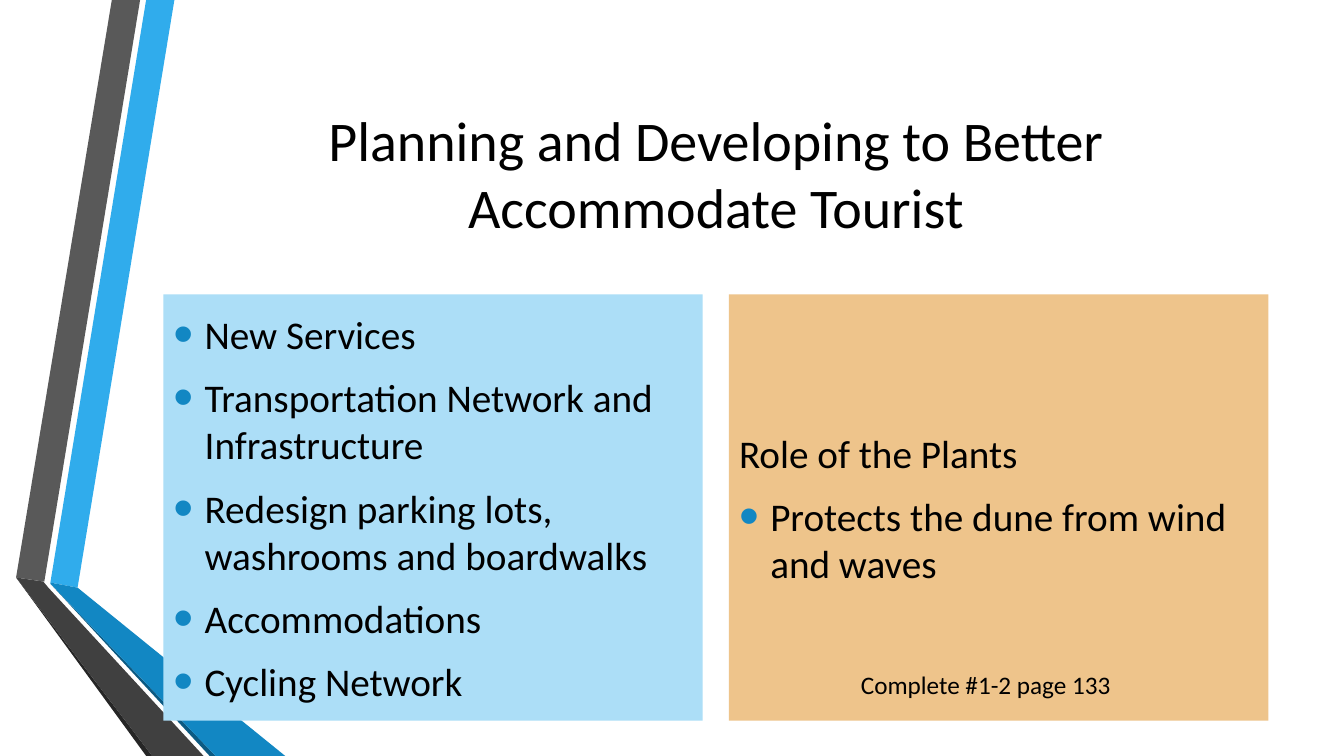
"""Build the slide on planning for tourists: ribbon, title and two panels."""
from lxml import etree
from pptx import Presentation
from pptx.dml.color import RGBColor
from pptx.enum import text
from pptx.oxml import ns
from pptx.util import Inches, Pt

COLORS = {
    "black": "000000", "sky": "30ACEC", "gray": "595959", "soot": "262626",
    "navy": "0C5A82", "blue": "1287C3", "char": "404040",
    "pale": "ACDEF7", "sand": "EEC48B",
}


def add_run(p, words, size):
    r = p.add_run()
    r.text = words
    r.font.name = "Calibri"
    r.font.size = Pt(size)
    r.font.color.rgb = RGBColor.from_string(COLORS["black"])


def set_bullet(p, bulleted):
    pPr = p._p.get_or_add_pPr()
    indent = Inches(0.31) if bulleted else 0
    pPr.set("marL", str(indent))
    pPr.set("indent", str(-indent))
    if not bulleted:
        etree.SubElement(pPr, ns.qn("a:buNone"))
        return
    clr = etree.SubElement(pPr, ns.qn("a:buClr"))
    etree.SubElement(clr, ns.qn("a:srgbClr"), val=COLORS["blue"])
    etree.SubElement(pPr, ns.qn("a:buSzPct"), val="145000")
    etree.SubElement(pPr, ns.qn("a:buFont"), typeface="Arial")
    etree.SubElement(pPr, ns.qn("a:buChar"), char="•")


prs = Presentation()
prs.slide_width, prs.slide_height = Inches(13.33), Inches(7.5)
s = prs.slides.add_slide(prs.slide_layouts[3])
title, left, right = s.placeholders

ribbon = [
    ("sky", [(0.5, 5.78), (0.77, 5.83), (1.73, 0), (1.45, 0)]),
    ("gray", [(1.39, 0), (1.11, 0), (0.16, 5.73), (0.44, 5.77)]),
    ("soot", [(0.16, 5.73), (1.45, 7.5), (1.51, 7.5)]),
    ("navy", [(0.5, 5.79), (2.08, 7.5), (2.14, 7.5)]),
    ("blue", [(0.5, 5.79), (2.14, 7.5), (2.83, 7.5), (0.77, 5.83), (0.5, 5.78)]),
    ("char", [(2.02, 7.5), (0.48, 5.83), (0.43, 5.77), (0.16, 5.73), (1.51, 7.5)]),
]
for color, points in ribbon:
    corners = [(Inches(x), Inches(y)) for x, y in points]
    fb = s.shapes.build_freeform(*corners[0])
    fb.add_line_segments(corners[1:])
    sp = fb.convert_to_shape()
    sp.shadow.inherit = False
    sp.fill.solid()
    sp.fill.fore_color.rgb = RGBColor.from_string(COLORS[color])
    sp.line.fill.background()

boxes = [(title, 1.62, 0.75, 10.96, 1.92), (left, 1.62, 2.92, 5.35, 4.23),
         (right, 7.23, 2.92, 5.35, 4.23)]
for sp, x, y, w, h in boxes:
    s.shapes._spTree.append(sp._element)
    sp.left, sp.top, sp.width, sp.height = map(Inches, (x, y, w, h))
    tf = sp.text_frame
    tf.word_wrap = True
    tf.auto_size = text.MSO_AUTO_SIZE.NONE
    tf.vertical_anchor = text.MSO_ANCHOR.MIDDLE

p = title.text_frame.paragraphs[0]
p.alignment = text.PP_ALIGN.CENTER
add_run(p, "Planning and Developing to Better Accommodate Tourist", 40)

panels = [
    (left, "pale", [("New Services", True),
                    ("Transportation Network and Infrastructure", True),
                    ("Redesign parking lots, washrooms and boardwalks", True),
                    ("Accommodations", True),
                    ("Cycling Network", True)]),
    (right, "sand", [("Role of the Plants", False),
                     ("Protects the dune from wind and waves", True)]),
]
for sp, color, items in panels:
    sp.fill.solid()
    sp.fill.fore_color.rgb = RGBColor.from_string(COLORS[color])
    tf = sp.text_frame
    for i, (words, bulleted) in enumerate(items):
        p = tf.add_paragraph() if i else tf.paragraphs[0]
        p.space_before, p.space_after = Pt(5.6), Pt(6)
        set_bullet(p, bulleted)
        add_run(p, words, 28)

sp = s.shapes.add_textbox(Inches(8.44), Inches(6.59), Inches(2.72), Inches(0.4))
tf = sp.text_frame
tf.word_wrap = False
tf.auto_size = text.MSO_AUTO_SIZE.SHAPE_TO_FIT_TEXT
add_run(tf.paragraphs[0], "Complete #1-2 page 133", 18)

prs.save("out.pptx")
